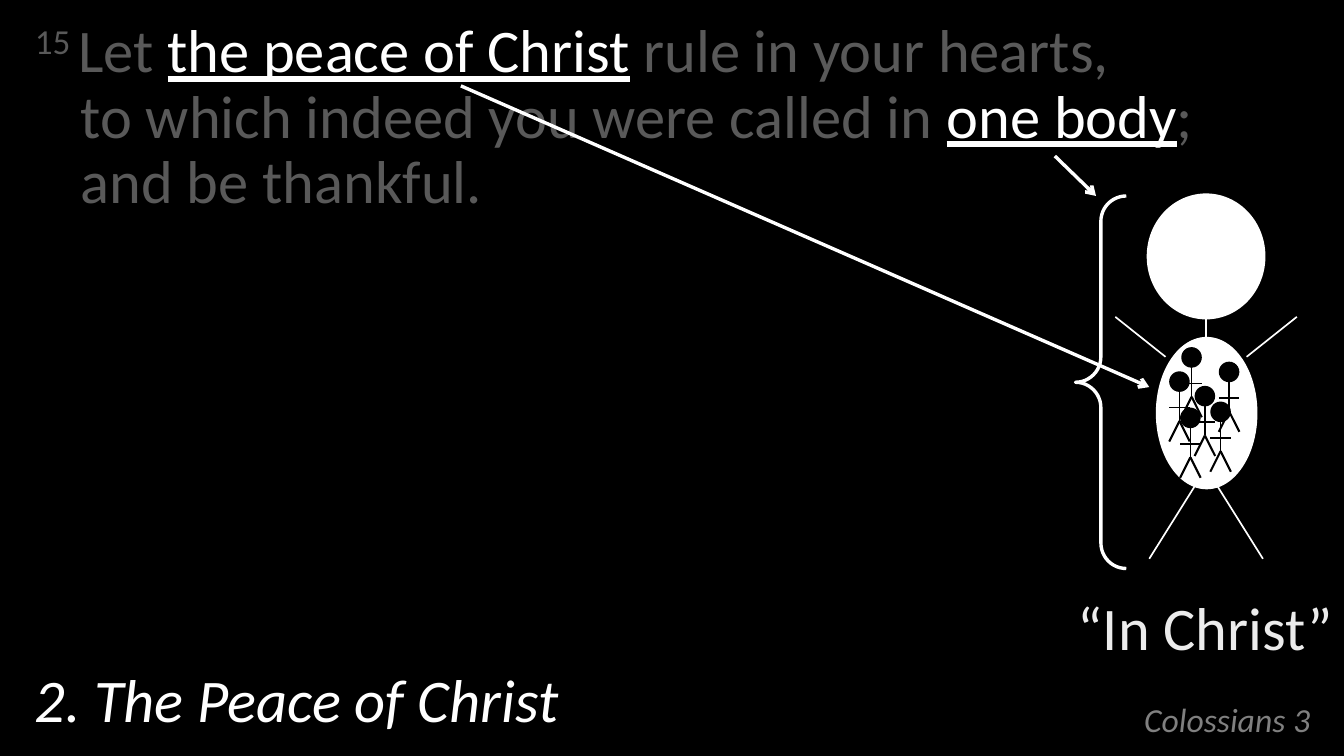
from dataclasses import dataclass

from lxml.etree import SubElement
from pptx import Presentation
from pptx.dml.color import RGBColor
from pptx.enum.shapes import MSO_CONNECTOR as Link, MSO_SHAPE as Kind
from pptx.enum.text import MSO_ANCHOR as Anchor, PP_ALIGN as Align
from pptx.oxml.ns import qn
from pptx.util import Inches, Pt


@dataclass(frozen=True)
class Theme:
    font: str = "Calibri"
    black: str = "000000"
    white: str = "FFFFFF"
    pale: str = "ECECEC"
    grey: str = "808080"
    dim: str = "595959"
    large: int = 36
    small: int = 20


THEME = Theme()


@dataclass(frozen=True)
class Span:
    text: str
    color: str = THEME.white
    size: int = THEME.large
    italic: bool = False
    under: bool = False
    lift: int = 0
    wrap: bool = False


@dataclass(frozen=True)
class Block:
    box: tuple[float, float, float, float]
    spans: tuple[Span, ...]
    align: Align = Align.LEFT
    anchor: Anchor = Anchor.TOP
    pitch: float = 1.0
    hang: float = 0.0


@dataclass(frozen=True)
class Stroke:
    start: tuple[float, float]
    end: tuple[float, float]
    width: float = 1
    color: str = THEME.white
    arrow: bool = False


@dataclass(frozen=True)
class Oval:
    box: tuple[float, float, float, float]
    color: str = THEME.white
    rim: float = 0


def add_block(slide, block: Block) -> None:
    frame = slide.shapes.add_textbox(*map(Inches, block.box)).text_frame
    frame.word_wrap = True
    frame.vertical_anchor = block.anchor
    para = frame.paragraphs[0]
    para.alignment = block.align
    para.line_spacing = block.pitch
    if block.hang:
        props = para._p.get_or_add_pPr()
        props.set("marL", str(Inches(block.hang)))
        props.set("indent", str(-Inches(block.hang)))
    for span in block.spans:
        add_span(para, span)


def add_span(para, span: Span) -> None:
    """Add one run, then a line break if the span asks for it."""
    run = para.add_run()
    run.text = span.text
    font = run.font
    font.name = THEME.font
    font.size = Pt(span.size)
    font.italic = span.italic
    font.underline = span.under
    font.color.rgb = RGBColor.from_string(span.color)
    if span.lift:
        font._element.set("baseline", str(span.lift * 1000))
    if span.wrap:
        para.add_line_break()


def add_stroke(slide, stroke: Stroke) -> None:
    ends = map(Inches, stroke.start + stroke.end)
    shape = slide.shapes.add_connector(Link.STRAIGHT, *ends)
    line = shape.line
    line.width = Pt(stroke.width)
    line.color.rgb = RGBColor.from_string(stroke.color)
    if stroke.arrow:
        SubElement(line._get_or_add_ln(), qn("a:tailEnd"), type="arrow")
    SubElement(shape._element.spPr, qn("a:effectLst"))


def add_oval(slide, oval: Oval) -> None:
    shape = slide.shapes.add_shape(Kind.OVAL, *map(Inches, oval.box))
    shape.shadow.inherit = False
    color = RGBColor.from_string(oval.color)
    shape.fill.solid()
    shape.fill.fore_color.rgb = color
    if oval.rim:
        shape.line.color.rgb = color
        shape.line.width = Pt(oval.rim)
    else:
        shape.line.fill.background()


def add_brace(slide) -> None:
    box = map(Inches, (8.89, 1.62, 0.42, 3.08))
    shape = slide.shapes.add_shape(Kind.LEFT_BRACE, *box)
    shape.shadow.inherit = False
    shape.adjustments[0] = 0.5
    shape.fill.background()
    shape.line.color.rgb = RGBColor.from_string(THEME.white)
    shape.line.width = Pt(2)


def add_body(slide) -> None:
    """Draw the large figure, mirrored about its middle."""
    mid = 9.97
    add_oval(slide, Oval((9.5, 1.62, 0.94, 1), rim=3))
    add_stroke(slide, Stroke((mid, 2.62), (mid, 3.87)))
    for side in (1, -1):
        add_stroke(slide, Stroke((mid, 3.87), (mid + side * 0.47, 4.62)))
        add_stroke(slide, Stroke((mid + side * 0.75, 2.62),
                                 (mid + side * 0.335, 2.95)))
    add_oval(slide, Oval((9.56, 2.79, 0.83, 1.25), rim=0.75))


def add_member(slide, mid: float, top: float) -> None:
    """Draw a small figure from the middle and top of its head."""
    ink, half = THEME.black, 0.085
    hip = top + 0.41
    add_oval(slide, Oval((mid - half, top, 2 * half, 2 * half), ink))
    add_stroke(slide, Stroke((mid, top + 0.16), (mid, hip), 1, ink))
    for side in (half, -half):
        foot = (mid + side, top + 0.58)
        add_stroke(slide, Stroke((mid, hip), foot, 1.25, ink))
    arm = top + 0.3
    add_stroke(slide, Stroke((mid - half, arm), (mid + half, arm), 1, ink))


BLOCKS = (
    Block((7.06, 5.56, 3.87, 0.6),
          (Span("Colossians 3", THEME.grey, THEME.small, italic=True),),
          Align.RIGHT, Anchor.BOTTOM, 0.8),
    Block((0.19, 0.12, 10.74, 5.29), (
        Span("15 ", THEME.dim, lift=30),
        Span("Let ", THEME.dim),
        Span("the peace of Christ", under=True),
        Span(" rule in your hearts,", THEME.dim, wrap=True),
        Span("to which indeed you were called in ", THEME.dim),
        Span("one body", under=True),
        Span(";", THEME.dim, wrap=True),
        Span("and be thankful.", THEME.dim),
    ), pitch=0.9, hang=0.38),
    Block((0.19, 5.54, 8.12, 0.6),
          (Span("2. The Peace of Christ", italic=True),),
          anchor=Anchor.BOTTOM, pitch=0.95, hang=0.38),
    Block((8.8, 4.83, 2.33, 0.71), (Span("“In Christ”", THEME.pale),),
          Align.CENTER),
)
ARROWS = (
    Stroke((8.72, 1.29), (9.06, 1.62), 2, arrow=True),
    Stroke((3.81, 0.71), (9.5, 3.2), 2, arrow=True),
)
MEMBERS = ((9.96, 3.19), (10.16, 2.99), (9.75, 3.07),
           (10.09, 3.32), (9.84, 3.37), (9.85, 2.87))


def main() -> None:
    deck = Presentation()
    deck.slide_width, deck.slide_height = Inches(11.11), Inches(6.25)
    slide = deck.slides.add_slide(deck.slide_layouts[6])
    back = slide.background.fill
    back.solid()
    back.fore_color.rgb = RGBColor.from_string(THEME.black)
    for block in BLOCKS:
        add_block(slide, block)
    add_body(slide)
    add_brace(slide)
    for arrow in ARROWS:
        add_stroke(slide, arrow)
    for mid, top in MEMBERS:
        add_member(slide, mid, top)
    deck.save("out.pptx")


if __name__ == "__main__":
    main()
